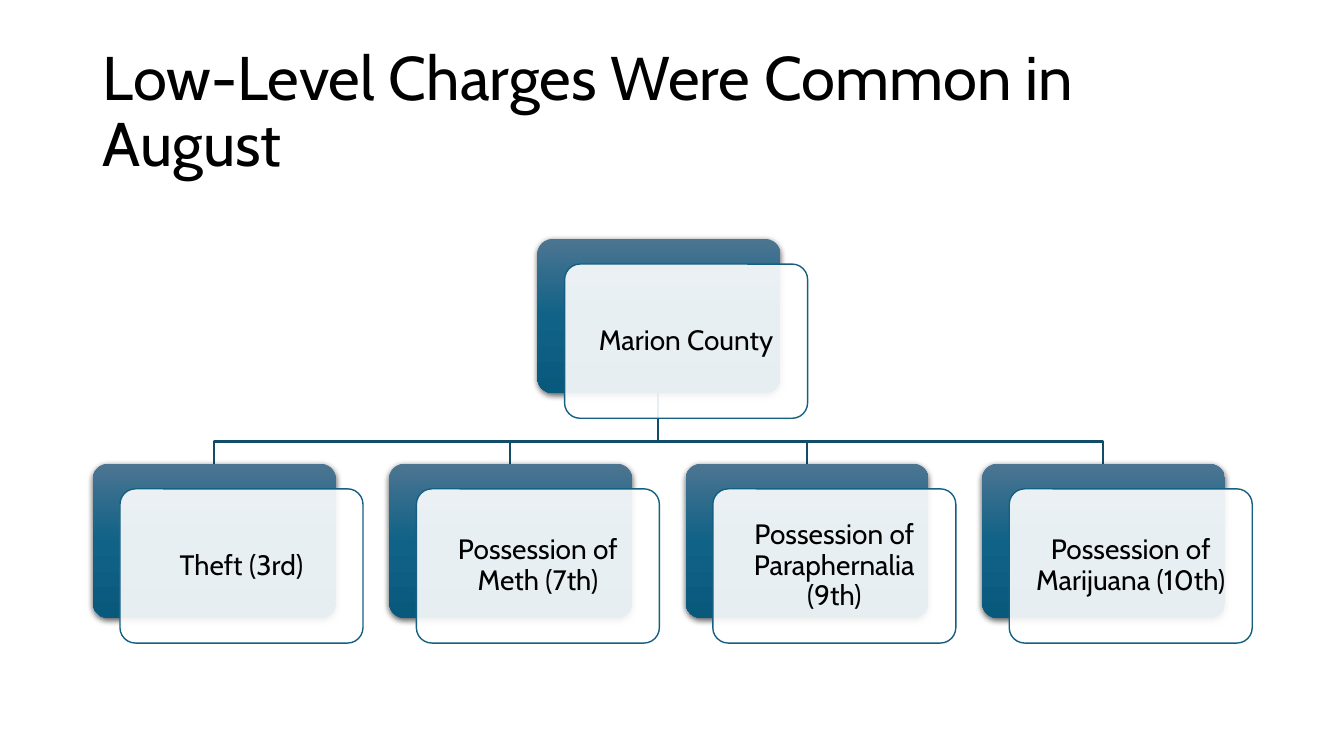
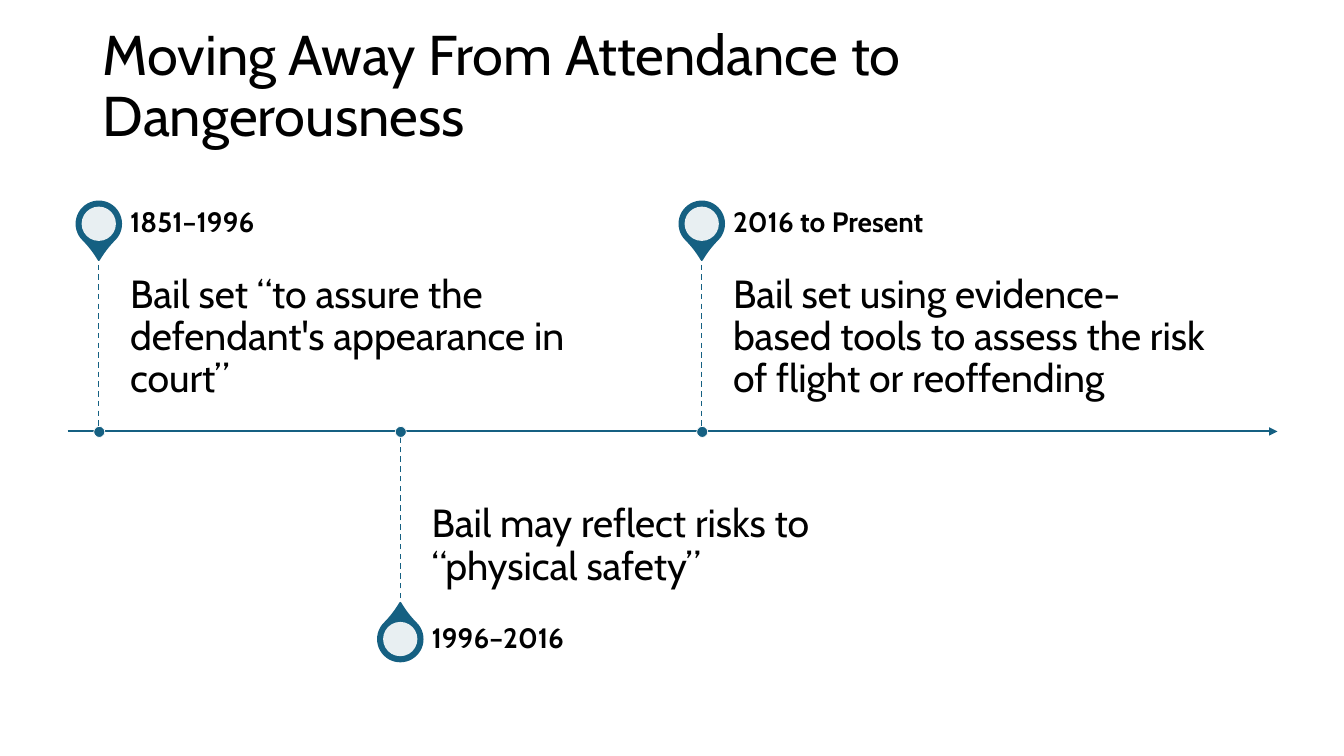
from dataclasses import dataclass

from lxml.etree import SubElement
from pptx import Presentation
from pptx.dml.color import RGBColor as Rgb
from pptx.enum.dml import MSO_LINE as Dash
from pptx.enum.shapes import MSO_CONNECTOR as Conn, MSO_SHAPE as Geo
from pptx.enum.text import MSO_ANCHOR as Anchor, MSO_AUTO_SIZE as Fit, PP_ALIGN as Align
from pptx.oxml.ns import qn
from pptx.util import Emu, Pt

PX = 9144  # EMU per px, 100 px to the inch
FONT = "Cabin"
HUES = {
    "text": "000000",
    "white": "FFFFFF",
    "blue": "156082",
    "link": "114D68",
    "top": "4C7591",
    "mid": "106287",
    "base": "09597D",
}


@dataclass(frozen=True)
class Box:
    x: int
    y: int
    w: int
    h: int

    def emu(self) -> list[Emu]:
        return [Emu(n * PX) for n in (self.x, self.y, self.w, self.h)]


@dataclass(frozen=True)
class Era:
    date: str
    note: str
    up: bool


# Shared helpers

def hue(name: str) -> Rgb:
    return Rgb.from_string(HUES[name])


def write(shape, text: str, size: int, anchor, align=Align.LEFT,
          pads: tuple = (0, 0, 0, 0), bold: bool = False) -> None:
    frame = shape.text_frame
    frame.word_wrap = True
    frame.auto_size = Fit.NONE
    frame.vertical_anchor = anchor
    (frame.margin_left, frame.margin_top,
     frame.margin_right, frame.margin_bottom) = [Emu(n * PX) for n in pads]
    frame.text = text
    para = frame.paragraphs[0]
    para.alignment = align
    para.line_spacing = 0.9
    font = para.font
    font.name, font.size, font.bold = FONT, Pt(size), bold
    font.color.rgb = hue("text")


def label(slide, box: Box, text: str, size: int, anchor, pads: tuple,
          bold: bool = False) -> None:
    write(slide.shapes.add_textbox(*box.emu()), text, size, anchor,
          pads=pads, bold=bold)


def shape(slide, geo, box: Box, fill: str, line: str = "", width: float = 1,
          alpha: int = 100):
    item = slide.shapes.add_shape(geo, *box.emu())
    item.shadow.inherit = False
    item.fill.solid()
    item.fill.fore_color.rgb = hue(fill)
    if alpha < 100:
        tint = item.element.spPr.find(qn("a:solidFill"))[0]
        SubElement(tint, qn("a:alpha"), val=str(alpha * 1000))
    if line:
        item.line.color.rgb = hue(line)
        item.line.width = Pt(width)
    else:
        item.line.fill.background()
    return item


def disc(slide, x: int, y: int, size: int, fill: str, geo=Geo.OVAL, **look):
    box = Box(x - size // 2, y - size // 2, size, size)
    return shape(slide, geo, box, fill, **look)


def rule(slide, x: int, y: int, to_x: int, to_y: int, width: float):
    ends = [Emu(n * PX) for n in (x, y, to_x, to_y)]
    line = slide.shapes.add_connector(Conn.STRAIGHT, *ends)
    line.line.color.rgb = hue("blue")
    line.line.width = Pt(width)
    SubElement(line.element.spPr, qn("a:effectLst"))
    return line


def page(deck, title: str, box: Box, size: int):
    slide = deck.slides.add_slide(deck.slide_layouts[5])
    head = slide.shapes.title
    head.left, head.top, head.width, head.height = box.emu()
    write(head, title, size, Anchor.MIDDLE, pads=(10, 5, 10, 5))
    return slide


# Chart of charges

CARD_W, CARD_H, PITCH = 241, 153, 294
LEFT, ROOT_Y, LEAF_Y, BUS_Y = 92, 237, 460, 438
CHARGES = (
    "Theft (3rd)",
    "Possession of Meth (7th)",
    "Possession of Paraphernalia (9th)",
    "Possession of Marijuana (10th)",
)


def shade(item) -> None:
    """Give a card its three-stop gradient and soft shadow."""
    item.fill.gradient()
    grad = item.element.spPr.find(qn("a:gradFill"))
    stops = grad.find(qn("a:gsLst"))
    for old in list(stops):
        stops.remove(old)
    for pos, name in ((0, "top"), (50, "mid"), (100, "base")):
        stop = SubElement(stops, qn("a:gs"), pos=str(pos * 1000))
        SubElement(stop, qn("a:srgbClr"), val=HUES[name])
    grad.find(qn("a:lin")).set("ang", "5400000")
    glow = SubElement(item.element.spPr.find(qn("a:effectLst")), qn("a:outerShdw"),
                      blurRad=str(Pt(4.5)), dist=str(Pt(1.5)), dir="5400000",
                      algn="ctr", rotWithShape="0")
    tint = SubElement(glow, qn("a:srgbClr"), val=HUES["text"])
    SubElement(tint, qn("a:alpha"), val="63000")


def card(slide, x: int, y: int, text: str) -> None:
    back = shape(slide, Geo.ROUNDED_RECTANGLE, Box(x, y, CARD_W, CARD_H), "mid")
    shade(back)
    front = shape(slide, Geo.ROUNDED_RECTANGLE, Box(x + 27, y + 25, CARD_W, CARD_H),
                  "white", line="blue", alpha=90)
    for item in (back, front):
        item.adjustments[0] = 0.1
    write(front, text, 20, Anchor.MIDDLE, Align.CENTER, (8, 8, 8, 8))


def link(slide, x: int, to_x: int) -> None:
    path = slide.shapes.build_freeform(x, ROOT_Y + CARD_H, scale=PX)
    path.add_line_segments([(x, BUS_Y), (to_x, BUS_Y), (to_x, LEAF_Y)], close=False)
    item = path.convert_to_shape()
    item.shadow.inherit = False
    item.fill.background()
    item.line.color.rgb = hue("link")
    item.line.width = Pt(1.5)


def charges(deck) -> None:
    slide = page(deck, "Low-Level Charges Were Common in August",
                 Box(92, 40, 1150, 145), 44)
    cols = [LEFT + n * PITCH for n in range(len(CHARGES))]
    root = (cols[0] + cols[-1]) // 2
    half = CARD_W // 2
    for x in cols:
        link(slide, root + half, x + half)
    card(slide, root, ROOT_Y, "Marion County")
    for x, text in zip(cols, CHARGES):
        card(slide, x, LEAF_Y, text)


# Timeline of bail

AXIS, STEM, DATE_H, NOTE_W = 428, 175, 62, 499
FIRST, STEP = 98, 299
ERAS = (
    Era("1851–1996", "Bail set “to assure the defendant's appearance in court”", True),
    Era("1996–2016", "Bail may reflect risks to “physical safety”", False),
    Era("2016 to Present", "Bail set using evidence-based tools to assess "
        "the risk of flight or reoffending", True),
)


def mark(slide, x: int, era: Era) -> None:
    if era.up:
        tip, note_y, date_y = AXIS - STEM, AXIS - STEM, AXIS - STEM - DATE_H
        turn, anchor, pads = 135, Anchor.TOP, (0, 19, 19, 29)
    else:
        tip, note_y, date_y = AXIS + STEM, AXIS, AXIS + STEM
        turn, anchor, pads = 315, Anchor.BOTTOM, (0, 29, 0, 19)
    mid = date_y + DATE_H // 2
    pin = disc(slide, x, mid, 44, "blue", Geo.TEAR, line="blue", width=1.5)
    pin.adjustments[0] = 1.15
    pin.rotation = turn
    disc(slide, x, mid, 34, "white", alpha=90)
    label(slide, Box(x + 31, note_y, NOTE_W, STEM), era.note, 28, anchor, pads)
    label(slide, Box(x + 31, date_y, NOTE_W, DATE_H), era.date, 20,
          Anchor.MIDDLE, (0, 0, 14, 0), bold=True)
    stem = rule(slide, x, tip, x, AXIS, 1)
    stem.line.dash_style = Dash.DASH
    disc(slide, x, AXIS, 11, "blue", line="white", width=0.5)


def history(deck) -> None:
    slide = page(deck, "Moving Away From Attendance to Dangerousness",
                 Box(92, 25, 1150, 124), 40)
    axis = rule(slide, 67, AXIS, 1267, AXIS, 1.5)
    SubElement(axis.element.spPr.find(qn("a:ln")), qn("a:tailEnd"), type="triangle")
    for n, era in enumerate(ERAS):
        mark(slide, FIRST + n * STEP, era)


def main() -> None:
    deck = Presentation()
    deck.slide_width, deck.slide_height = Emu(1333 * PX), Emu(750 * PX)
    charges(deck)
    history(deck)
    deck.save("out.pptx")


if __name__ == "__main__":
    main()
